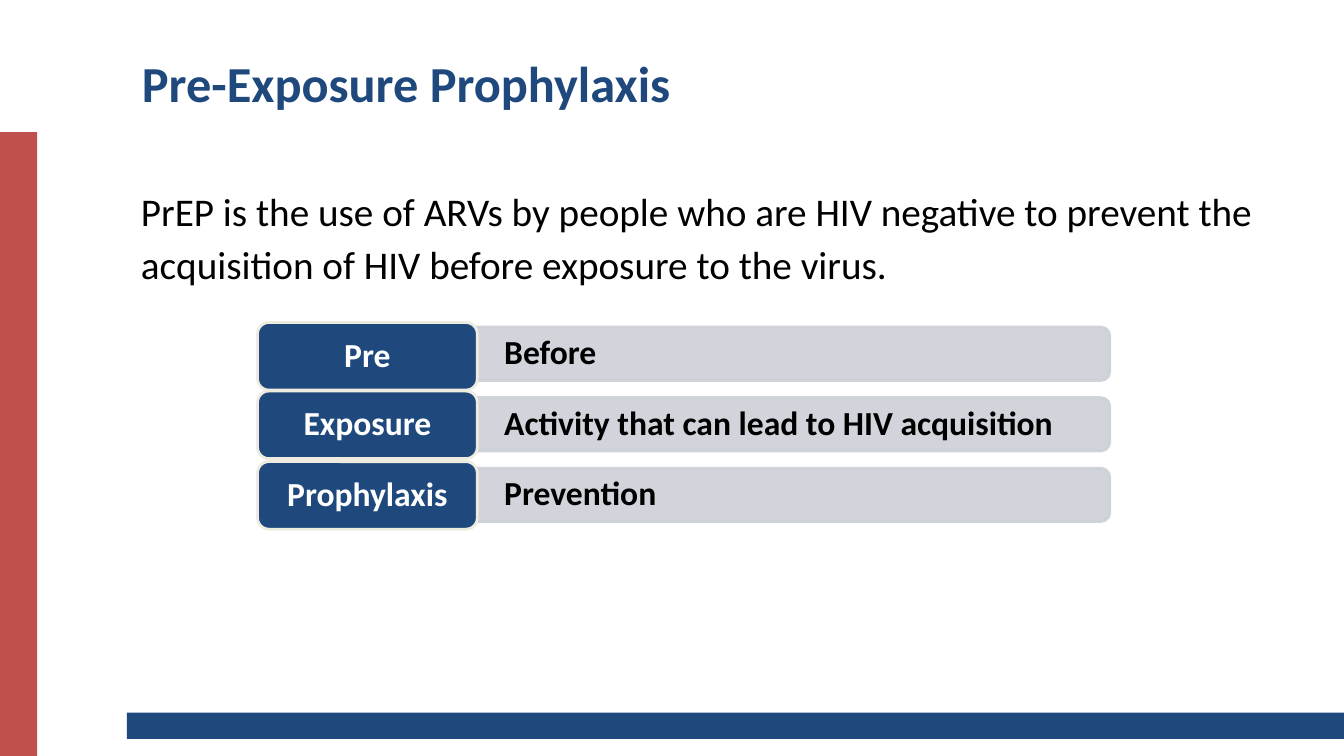
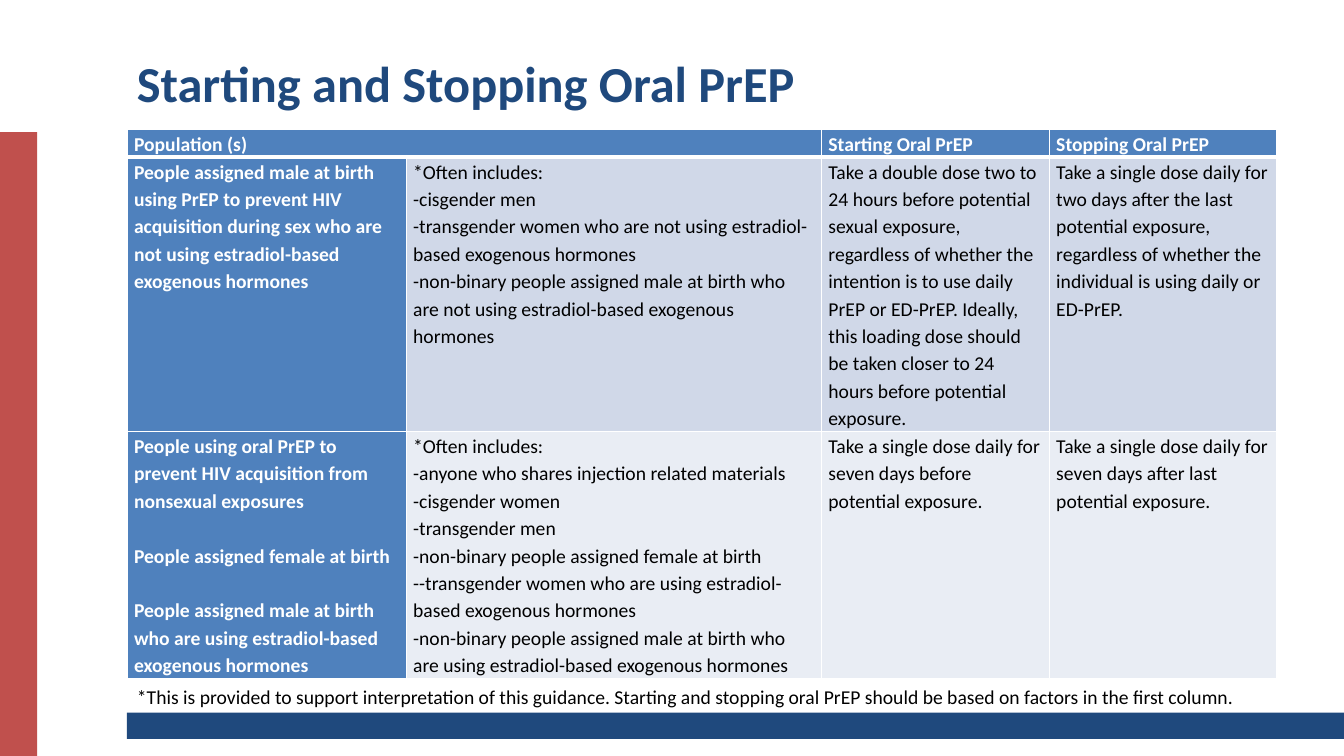
import pptx
import pptx.dml.color
import pptx.enum.shapes
import pptx.enum.text
import pptx.oxml
import pptx.oxml.ns
import pptx.util

Pt = pptx.util.Pt
RGBColor = pptx.dml.color.RGBColor
Shape = pptx.enum.shapes.MSO_SHAPE
Align = pptx.enum.text.PP_ALIGN
Anchor = pptx.enum.text.MSO_ANCHOR

NAVY = RGBColor(0x1F, 0x49, 0x7D)
RED = RGBColor(0xC0, 0x50, 0x4D)
BLUE = RGBColor(0x4F, 0x81, 0xBD)
GREY = RGBColor(0xCD, 0xD0, 0xD7)
CREAM = RGBColor(0xEE, 0xEC, 0xE1)
BAND_DARK = RGBColor(0xD0, 0xD8, 0xE8)
BAND_LIGHT = RGBColor(0xE9, 0xED, 0xF4)
WHITE = RGBColor(0xFF, 0xFF, 0xFF)
BLACK = RGBColor(0, 0, 0)
FONT = "Calibri"

DEFINITION = (
    "PrEP is the use of ARVs by people who are HIV negative to prevent the "
    "acquisition of HIV before exposure to the virus."
)
TERMS = [
    ("Pre", "Before", 230.4),
    ("Exposure", "Activity that can lead to HIV acquisition", 279.36),
    ("Prophylaxis", "Prevention", 329.76),
]
BAR_TOP, BAR_PITCH = 233.64, 50.4
BAR_LEFT, BAR_WIDTH, BAR_HEIGHT = 340.56, 452.16, 38.16

HEADER = [["Population (s)"], [], ["Starting Oral PrEP"], ["Stopping Oral PrEP"]]
REGIMENS = [
    [
        [
            "People assigned male at birth using PrEP to prevent HIV acquisition "
            "during sex who are not using estradiol-based exogenous hormones"
        ],
        [
            "*Often includes:",
            "-cisgender men",
            "-transgender women who are not using estradiol-based exogenous hormones",
            "-non-binary people assigned male at birth who are not using "
            "estradiol-based exogenous hormones",
        ],
        [
            "Take a double dose two to 24 hours before potential sexual exposure, "
            "regardless of whether the intention is to use daily PrEP or ED-PrEP. "
            "Ideally, this loading dose should be taken closer to 24 hours before "
            "potential exposure."
        ],
        [
            "Take a single dose daily for two days after the last potential exposure, "
            "regardless of whether the individual is using daily or ED-PrEP."
        ],
    ],
    [
        [
            "People using oral PrEP to prevent HIV acquisition from nonsexual exposures",
            "People assigned female at birth",
            "People assigned male at birth who are using estradiol-based exogenous hormones",
        ],
        [
            "*Often includes:",
            "-anyone who shares injection related materials",
            "-cisgender women",
            "-transgender men",
            "-non-binary people assigned female at birth",
            "--transgender women who are using estradiol-based exogenous hormones",
            "-non-binary people assigned male at birth who are using "
            "estradiol-based exogenous hormones",
        ],
        ["Take a single dose daily for seven days before potential exposure."],
        ["Take a single dose daily for seven days after last potential exposure."],
    ],
]
COLUMN_WIDTHS = [199.44, 296.64, 162.72, 162.72]
ROW_HEIGHTS = [19.8, 196, 176.8]
ROW_FILLS = [BLUE, BAND_DARK, BAND_LIGHT]
LINE_GAP = 19.6
FOOTNOTE = (
    "*This is provided to support interpretation of this guidance. Starting and "
    "stopping oral PrEP should be based on factors in the first column."
)


def write(holder, *texts, size, color=BLACK, bold=False, align=Align.LEFT,
          anchor=Anchor.TOP, spacing=1.0, gap=0, insets=(7.2, 3.6)):
    holder.vertical_anchor = anchor
    holder.margin_left = holder.margin_right = Pt(insets[0])
    holder.margin_top = holder.margin_bottom = Pt(insets[1])
    frame = getattr(holder, "text_frame", holder)
    for index, text in enumerate(texts):
        para = frame.add_paragraph() if index else frame.paragraphs[0]
        para.alignment = align
        para.line_spacing = spacing
        if index and gap:
            para.space_before = Pt(gap)
        span = para.add_run()
        span.text = text
        span.font.name = FONT
        span.font.size = Pt(size)
        span.font.bold = bold
        span.font.color.rgb = color


def add_text(page, area, text, **style):
    box = page.shapes.add_textbox(*map(Pt, area))
    box.text_frame.word_wrap = True
    write(box.text_frame, text, **style)


def add_block(page, kind, area, fill, line=None):
    block = page.shapes.add_shape(kind, *map(Pt, area))
    block.shadow.inherit = False
    block.fill.solid()
    block.fill.fore_color.rgb = fill
    if line is None:
        block.line.fill.background()
    else:
        block.line.color.rgb = line
        block.line.width = Pt(2)
    return block


def add_page(deck, title, left):
    page = deck.slides.add_slide(deck.slide_layouts[6])
    add_block(page, Shape.RECTANGLE, (90.72, 509.04, 869.28, 18.72), NAVY)
    add_block(page, Shape.RECTANGLE, (0, 94.32, 26.64, 445.68), RED)
    add_text(page, (left, 25.2, 921.6 - left, 67.68), title, size=36,
             color=NAVY, bold=True, anchor=Anchor.MIDDLE)
    return page


def make_translucent(shape, percent):
    for color in shape.element.spPr.iter(pptx.oxml.ns.qn("a:srgbClr")):
        color.append(pptx.oxml.parse_xml(
            f'<a:alpha {pptx.oxml.ns.nsdecls("a")} val="{percent * 1000}"/>'))


def add_term(page, row, term, meaning, badge_top):
    top = BAR_TOP + row * BAR_PITCH
    middle_x, middle_y = BAR_LEFT + BAR_WIDTH / 2, top + BAR_HEIGHT / 2
    bar = add_block(page, Shape.ROUND_2_SAME_RECTANGLE,
                    (middle_x - BAR_HEIGHT / 2, middle_y - BAR_WIDTH / 2,
                     BAR_HEIGHT, BAR_WIDTH), GREY, GREY)
    bar.rotation = 90
    make_translucent(bar, 90)
    add_text(page, (BAR_LEFT, top, BAR_WIDTH, BAR_HEIGHT), meaning, size=24,
             bold=True, anchor=Anchor.MIDDLE, spacing=0.9, insets=(19.6, 0))
    badge = add_block(page, Shape.ROUNDED_RECTANGLE,
                      (183.96, badge_top, 156.96, 48.24), NAVY, CREAM)
    write(badge.text_frame, term, size=24, color=WHITE, bold=True,
          align=Align.CENTER, anchor=Anchor.MIDDLE, spacing=0.9)


def set_borders(cell, row):
    thick = {0: "B", 1: "T"}.get(row)
    properties = cell._tc.get_or_add_tcPr()
    for index, side in enumerate("LRTB"):
        width = Pt(3 if side == thick else 1)
        properties.insert(index, pptx.oxml.parse_xml(
            f'<a:ln{side} {pptx.oxml.ns.nsdecls("a")} w="{width}"><a:solidFill>'
            f'<a:srgbClr val="{WHITE}"/></a:solidFill></a:ln{side}>'))


def add_regimen_table(page):
    rows = [HEADER] + REGIMENS
    area = (90.72, 92.2, sum(COLUMN_WIDTHS), sum(ROW_HEIGHTS))
    table = page.shapes.add_table(len(rows), len(COLUMN_WIDTHS), *map(Pt, area)).table
    table.horz_banding = False
    for column, width in zip(table.columns, COLUMN_WIDTHS):
        column.width = Pt(width)
    for row, height in zip(table.rows, ROW_HEIGHTS):
        row.height = Pt(height)
    table.cell(0, 0).merge(table.cell(0, 1))
    for row, entries in enumerate(rows):
        for column, texts in enumerate(entries):
            cell = table.cell(row, column)
            heading = row == 0 or column == 0
            cell.fill.solid()
            cell.fill.fore_color.rgb = BLUE if heading else ROW_FILLS[row]
            set_borders(cell, row)
            write(cell, *texts, size=14, color=WHITE if heading else BLACK,
                  bold=heading, spacing=1.15, insets=(5.04, 0),
                  gap=LINE_GAP if column == 0 else 0)


def main():
    deck = pptx.Presentation()
    deck.slide_width, deck.slide_height = Pt(960), Pt(540)

    page = add_page(deck, "Pre-Exposure Prophylaxis", 94.32)
    add_text(page, (93.6, 125.28, 838.08, 96), DEFINITION, size=28, spacing=1.14)
    for row, (term, meaning, badge_top) in enumerate(TERMS):
        add_term(page, row, term, meaning, badge_top)

    page = add_page(deck, "Starting and Stopping Oral PrEP", 90.72)
    add_regimen_table(page)
    add_text(page, (90.72, 486, 821.52, 24.48), FOOTNOTE, size=14)

    deck.save("out.pptx")


if __name__ == "__main__":
    main()
